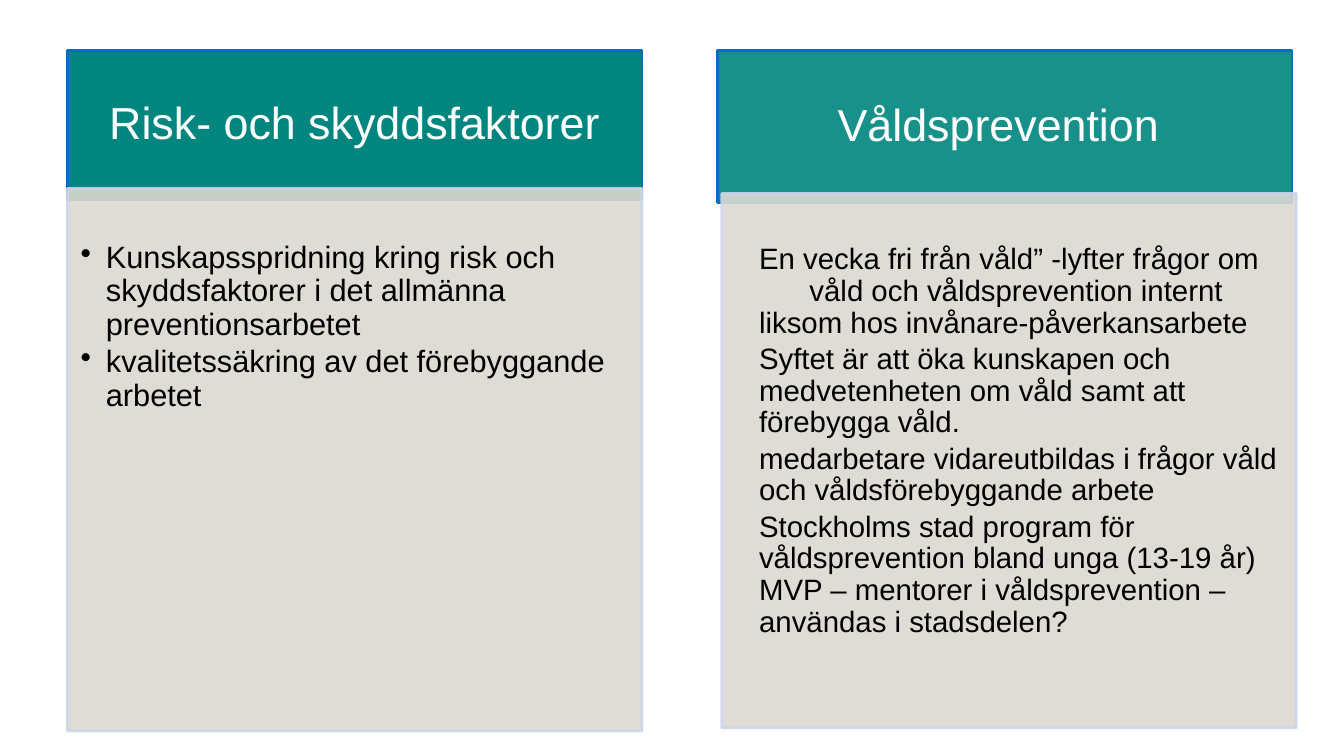
"""Build a slide with two headed panels on risk factors and violence prevention."""
from dataclasses import dataclass

import lxml.etree
import pptx
import pptx.dml.color
import pptx.enum.shapes
import pptx.enum.text
import pptx.oxml.ns
import pptx.shapes.autoshape
import pptx.slide
import pptx.util

Cm = pptx.util.Cm
Pt = pptx.util.Pt
qn = pptx.oxml.ns.qn
Anchor = pptx.enum.text.MSO_ANCHOR
Align = pptx.enum.text.PP_ALIGN


@dataclass(frozen=True)
class Theme:
    """Colours and type sizes of the slide."""
    font: str = "Arial"
    teal: str = "00867F"
    blue: str = "006EBF"
    sand: str = "DCD9D2"
    mist: str = "CCD5E8"
    white: str = "FFFFFF"
    black: str = "000000"
    heading_size: float = 32
    risk_size: float = 22
    violence_size: float = 21
    outline: float = 2


@dataclass(frozen=True)
class Box:
    """Position, size and text insets in centimetres."""
    left: float
    top: float
    width: float
    height: float
    insets: tuple[float, float, float, float]


@dataclass(frozen=True)
class Panel:
    """A heading bar with a body of paragraphs below it."""
    heading: str
    heading_box: Box
    heading_opacity: int
    body: tuple[str, ...]
    body_box: Box
    body_size: float
    bulleted: bool


THEME = Theme()
WIDTH = 14.48
TOP = 1.27
INDENT = 0.64
WRAP_TAB = 1.45
HEADING_INSETS = (0.64, 0.36, 0.64, 0.36)

PANELS = (
    Panel(
        "Risk- och skyddsfaktorer",
        Box(1.7, TOP, WIDTH, 3.76, HEADING_INSETS),
        100,
        (
            "Kunskapsspridning kring risk och skyddsfaktorer i det allmänna preventionsarbetet",
            "kvalitetssäkring av det förebyggande arbetet",
        ),
        Box(1.7, 4.75, WIDTH, 13.67, (0.33, 1.35, 0.43, 0.48)),
        THEME.risk_size,
        True,
    ),
    Panel(
        "Våldsprevention ",
        Box(18.08, TOP, WIDTH, 3.84, HEADING_INSETS),
        90,
        (
            "En vecka fri från våld” -lyfter frågor om\v\tvåld och våldsprevention internt "
            "liksom hos invånare-påverkansarbete",
            "Syftet är att öka kunskapen och medvetenheten om våld samt att förebygga våld.",
            "medarbetare vidareutbildas i frågor våld och våldsförebyggande arbete",
            "Stockholms stad program för våldsprevention bland unga (13-19 år) "
            "MVP – mentorer i våldsprevention – användas i stadsdelen?",
        ),
        Box(18.19, 4.88, WIDTH, 13.46, (0.3, 1.28, 0.4, 0.46)),
        THEME.violence_size,
        False,
    ),
)


def set_opacity(fill: pptx.dml.fill.FillFormat, color: str, opacity: int) -> None:
    """Fill with a solid colour at the given opacity in percent."""
    fill.solid()
    fill.fore_color.rgb = pptx.dml.color.RGBColor.from_string(color)
    if opacity < 100:
        color_element = fill._xPr.find(qn("a:solidFill"))[0]
        alpha = lxml.etree.SubElement(color_element, qn("a:alpha"))
        alpha.set("val", str(opacity * 1000))


def add_box(slide: pptx.slide.Slide, box: Box, *, fill: str, line: str,
            fill_opacity: int, line_opacity: int) -> pptx.shapes.autoshape.Shape:
    """Draw an outlined rectangle."""
    rectangle = slide.shapes.add_shape(
        pptx.enum.shapes.MSO_SHAPE.RECTANGLE,
        Cm(box.left), Cm(box.top), Cm(box.width), Cm(box.height))
    rectangle.shadow.inherit = False
    set_opacity(rectangle.fill, fill, fill_opacity)
    set_opacity(rectangle.line.fill, line, line_opacity)
    rectangle.line.width = Pt(THEME.outline)
    frame = rectangle.text_frame
    frame.word_wrap = True
    (frame.margin_left, frame.margin_top,
     frame.margin_right, frame.margin_bottom) = map(Cm, box.insets)
    return rectangle


def write_text(shape: pptx.shapes.autoshape.Shape, texts: tuple[str, ...], *,
               size: float, color: str, align: Align = Align.LEFT,
               anchor: Anchor = Anchor.TOP, indent: float = 0,
               bulleted: bool = False) -> None:
    """Write formatted paragraphs into a shape."""
    frame = shape.text_frame
    frame.vertical_anchor = anchor
    for index, text in enumerate(texts):
        paragraph = frame.paragraphs[0] if index == 0 else frame.add_paragraph()
        paragraph.text = text
        paragraph.alignment = align
        paragraph.line_spacing = 0.9
        paragraph.space_after = Pt(0.15 * size)
        properties = paragraph._p.get_or_add_pPr()
        properties.set("marL", str(Cm(indent)))
        properties.set("indent", str(Cm(-indent if bulleted else 0)))
        if bulleted:
            lxml.etree.SubElement(properties, qn("a:buChar")).set("char", "•")
        if "\t" in text:
            tabs = lxml.etree.SubElement(properties, qn("a:tabLst"))
            tab = lxml.etree.SubElement(tabs, qn("a:tab"))
            tab.set("pos", str(Cm(WRAP_TAB)))
            tab.set("algn", "l")
        for run in paragraph.runs:
            run.font.name = THEME.font
            run.font.size = Pt(size)
            run.font.color.rgb = pptx.dml.color.RGBColor.from_string(color)


def draw_panel(slide: pptx.slide.Slide, panel: Panel) -> None:
    """Draw a heading bar and the body that overlaps it."""
    heading = add_box(slide, panel.heading_box, fill=THEME.teal, line=THEME.blue,
                      fill_opacity=panel.heading_opacity, line_opacity=100)
    write_text(heading, (panel.heading,), size=THEME.heading_size, color=THEME.white,
               align=Align.CENTER, anchor=Anchor.MIDDLE)
    body = add_box(slide, panel.body_box, fill=THEME.sand, line=THEME.mist,
                   fill_opacity=90, line_opacity=90)
    write_text(body, panel.body, size=panel.body_size, color=THEME.black,
               indent=INDENT, bulleted=panel.bulleted)


def main() -> None:
    """Build and save the presentation."""
    presentation = pptx.Presentation()
    presentation.slide_width = Cm(33.87)
    presentation.slide_height = Cm(19.05)
    slide = presentation.slides.add_slide(presentation.slide_layouts[6])
    for panel in PANELS:
        draw_panel(slide, panel)
    presentation.save("out.pptx")


if __name__ == "__main__":
    main()
